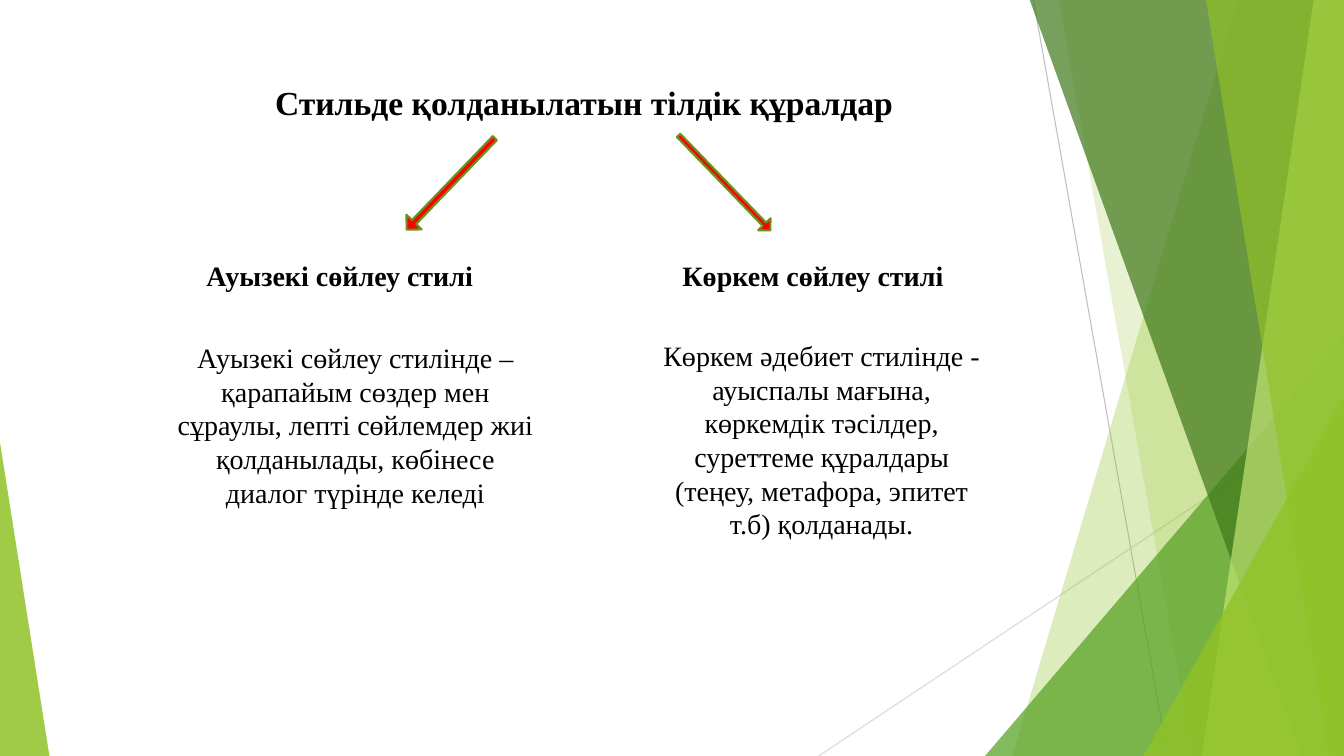
"""Build the slide on language means used in two Kazakh speech styles."""
from lxml import etree
from pptx import Presentation
from pptx import util as u
from pptx.dml.color import RGBColor
from pptx.enum import shapes, text
from pptx.oxml import ns

WIDTH, HEIGHT = 13.33, 7.5
TOP = -0.01

deck = Presentation()
deck.slide_width, deck.slide_height = u.Inches(WIDTH), u.Inches(HEIGHT)
slide = deck.slides.add_slide(deck.slide_layouts[6])


def paint(part, fill, opacity=100, outline=None):
    part.shadow.inherit = False
    part.fill.solid()
    part.fill.fore_color.rgb = RGBColor.from_string(fill)
    if opacity < 100:
        tint = part.fill._xPr.find(".//" + ns.qn("a:srgbClr"))
        etree.SubElement(tint, ns.qn("a:alpha"), val=str(opacity * 1000))
    if outline:
        part.line.color.rgb = RGBColor.from_string(outline)
        part.line.width = u.Pt(1.5)
    else:
        part.line.fill.background()


def write(words, left, top, width, height, size=20, bold=False, wrap=True,
          align=text.PP_ALIGN.LEFT, color="000000"):
    box = slide.shapes.add_textbox(*map(u.Inches, (left, top, width, height)))
    box.text_frame.word_wrap = wrap
    box.text_frame.auto_size = text.MSO_AUTO_SIZE.SHAPE_TO_FIT_TEXT
    paragraph = box.text_frame.paragraphs[0]
    paragraph.alignment = align
    run = paragraph.add_run()
    run.text = words
    run.font.name = "Times New Roman"
    run.font.size = u.Pt(size)
    run.font.bold = bold
    run.font.color.rgb = RGBColor.from_string(color)


for ends, color in [((10.25, 0, 11.58, HEIGHT), "BFBFBF"),
                    ((WIDTH, 4.03, 8.12, HEIGHT), "D9D9D9")]:
    ray = slide.shapes.add_connector(shapes.MSO_CONNECTOR.STRAIGHT, *map(u.Inches, ends))
    ray.line.color.rgb = RGBColor.from_string(color)
    ray.line.width = u.Pt(0.75)
    etree.SubElement(ray._element.spPr, ns.qn("a:effectLst"))

facets = [
    ("band", (12.28, 10.04), "90C226", 30),
    ("band", (10.5, 11.83), "90C226", 20),
    ("triangle", (9.77, 3.33, 3.56, 1), "54A021", 72),
    ("band", (10.21, 12.91), "3F7819", 70),
    ("band", (13.03, 11.92), "C0E474", 70),
    ("band", (11.96, 13.18), "90C226", 65),
    ("triangle", (11.34, 3.93, 1.99, 1), "90C226", 80),
    ("triangle", (0, 4.39, 0.49, 0), "90C226", 85),
]
for kind, geometry, color, opacity in facets:
    if kind == "band":
        upper, lower = geometry
        outline = slide.shapes.build_freeform(u.Inches(upper), u.Inches(TOP))
        corners = [(WIDTH, TOP), (WIDTH, HEIGHT), (lower, HEIGHT)]
        outline.add_line_segments([(u.Inches(x), u.Inches(y)) for x, y in corners])
        facet = outline.convert_to_shape()
    else:
        left, top, width, apex = geometry
        facet = slide.shapes.add_shape(
            shapes.MSO_SHAPE.ISOSCELES_TRIANGLE,
            *map(u.Inches, (left, top, width, HEIGHT - top)))
        facet.adjustments[0] = apex
    paint(facet, color, opacity)

for place, angle in [((6.53, 1.73, 1.31, 0.17), 46), ((3.84, 1.72, 1.26, 0.21), 133.9)]:
    arrow = slide.shapes.add_shape(shapes.MSO_SHAPE.RIGHT_ARROW, *map(u.Inches, place))
    arrow.adjustments[0] = 0.27
    arrow.rotation = angle
    paint(arrow, "FF0000", outline="6B901C")

write("Стильде қолданылатын тілдік құралдар", 2.63, 0.76, 6.4, 0.5,
      size=24, bold=True, wrap=False)
for heading, left in [("Ауызекі сөйлеу стилі", 1.95), ("Көркем сөйлеу стилі", 6.67)]:
    write(heading, left, 2.52, 2.96, 0.44, bold=True)
write("Ауызекі сөйлеу стилінде – қарапайым сөздер мен сұраулы, лепті сөйлемдер "
      "жиі қолданылады, көбінесе диалог түрінде келеді",
      1.65, 3.33, 3.75, 1.78, align=text.PP_ALIGN.CENTER)
write("Көркем әдебиет стилінде - ауыспалы мағына, көркемдік тәсілдер, суреттеме "
      "құралдары (теңеу, метафора, эпитет т.б) қолданады.",
      6.46, 3.31, 3.38, 2.12, align=text.PP_ALIGN.CENTER)

deck.save("out.pptx")
